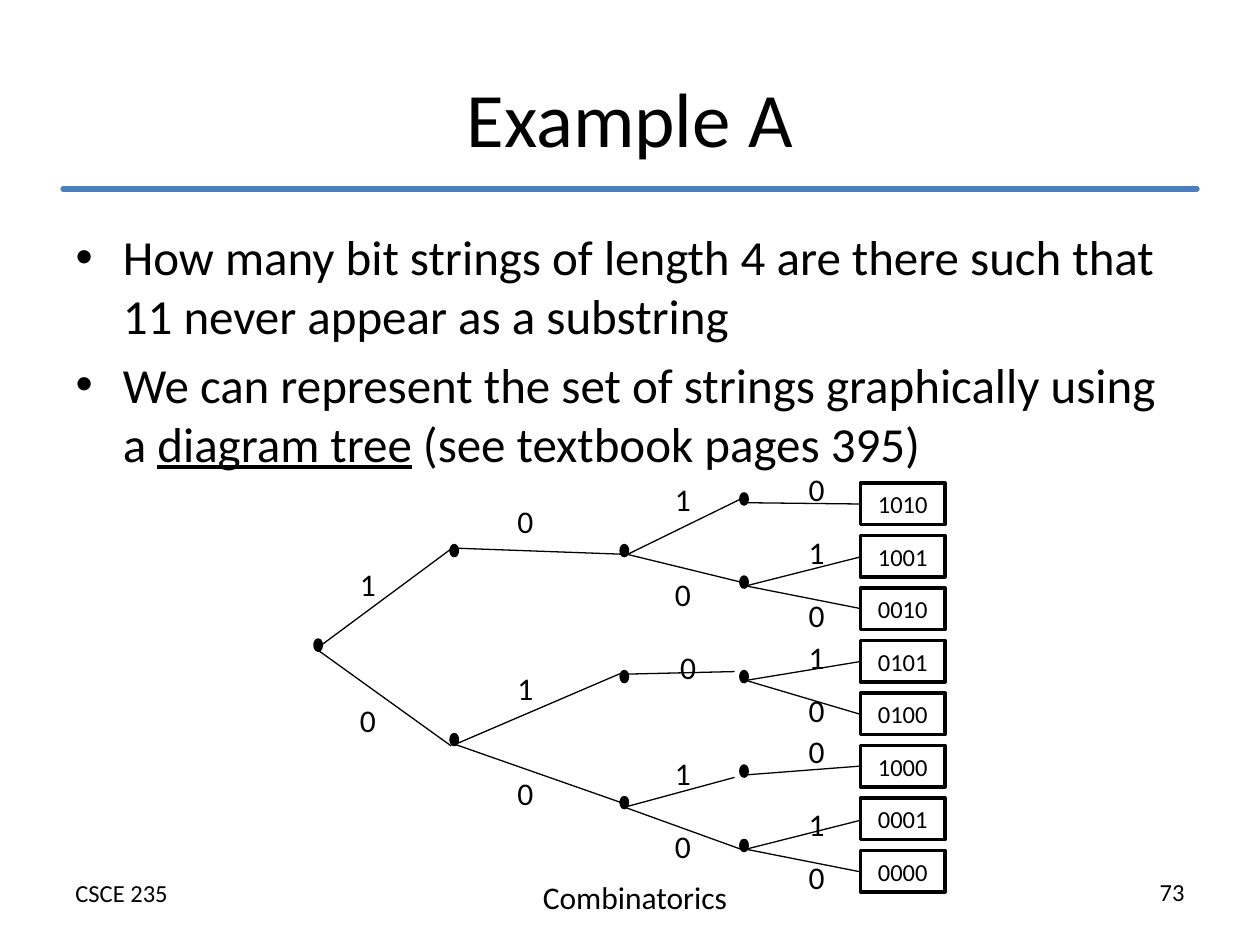
from typing import NamedTuple

from lxml.etree import SubElement
from pptx import Presentation
from pptx.dml.color import RGBColor
from pptx.enum.shapes import MSO_CONNECTOR, MSO_SHAPE
from pptx.enum.text import MSO_ANCHOR, MSO_AUTO_SIZE, PP_ALIGN
from pptx.oxml.ns import qn
from pptx.util import Inches, Pt

FONT = "Calibri"
BLACK = "000000"
BLUE = "4B7EBC"
BOX_LEFT, BOX_TOP, BOX_PITCH = 6.83, 46 / 12, 5 / 12
BOX_WIDTH, BOX_HEIGHT = 0.67, 0.33
NODE_WIDTH, NODE_HEIGHT = 0.05, 0.08
LABEL_SIZE = 0.42


class Edge(NamedTuple):
    start: tuple[float, float]
    end: tuple[float, float]
    bit: str
    label: tuple[float, float]


class Caption(NamedTuple):
    text: str
    left: float
    top: float
    height: float
    size: int
    alignment: PP_ALIGN


CAPTIONS = [
    Caption("CSCE 235", 0.5, 6.92, 0.34, 14, PP_ALIGN.LEFT),
    Caption("Combinatorics", 3.58, 6.92, 0.4, 18, PP_ALIGN.CENTER),
    Caption("73", 6.58, 6.91, 0.34, 14, PP_ALIGN.RIGHT),
]
BIT_STRINGS = ["1010", "1001", "0010", "0101", "0100", "1000", "0001", "0000"]
NODE_COLUMNS = {
    2.5: [5.08],
    3.58: [4.33, 5.83],
    4.93: [4.33, 5.33, 6.33],
    5.88: [3.92, 4.58, 5.33, 6.08, 6.67],
}
EDGES = [
    Edge((2.51, 5.15), (3.59, 4.35), "1", (2.71, 4.42)),
    Edge((2.51, 5.15), (3.58, 5.92), "0", (2.71, 5.5)),
    Edge((3.59, 4.35), (4.98, 4.4), "0", (3.96, 3.92)),
    Edge((3.63, 5.9), (4.96, 5.33), "1", (3.96, 5.25)),
    Edge((3.59, 5.9), (4.93, 6.37), "0", (3.96, 6.08)),
    Edge((4.98, 4.4), (5.88, 3.96), "1", (5.21, 3.75)),
    Edge((4.98, 4.4), (5.88, 4.62), "0", (5.21, 4.5)),
    Edge((4.98, 5.35), (5.83, 5.33), "0", (5.25, 5.08)),
    Edge((4.98, 6.4), (5.83, 6.17), "1", (5.21, 5.92)),
    Edge((4.94, 6.4), (5.88, 6.74), "0", (5.21, 6.5)),
    Edge((5.92, 3.99), (6.83, 4), "0", (6.27, 3.67)),
    Edge((5.92, 4.65), (6.83, 4.42), "1", (6.27, 4.17)),
    Edge((5.92, 4.65), (6.83, 4.83), "0", (6.27, 4.67)),
    Edge((5.92, 5.4), (6.83, 5.25), "1", (6.27, 5)),
    Edge((5.92, 5.4), (6.83, 5.67), "0", (6.27, 5.42)),
    Edge((5.92, 6.15), (6.83, 6.08), "0", (6.27, 5.75)),
    Edge((5.92, 6.74), (6.83, 6.51), "1", (6.27, 6.33)),
    Edge((5.92, 6.74), (6.83, 6.92), "0", (6.27, 6.75)),
]
BULLETS = [
    ["How many bit strings of length 4 are there such that 11 never appear as a substring"],
    ["We can represent the set of strings graphically using a ", "diagram tree", " (see textbook pages 395)"],
]


def color(hex_value: str) -> RGBColor:
    """Turn a hex string into a colour."""
    return RGBColor.from_string(hex_value)


def format_text(shape, size: int, alignment: PP_ALIGN) -> None:
    """Give all text of a shape one font, size, colour and alignment."""
    for paragraph in shape.text_frame.paragraphs:
        paragraph.alignment = alignment
        for run in paragraph.runs:
            run.font.name = FONT
            run.font.size = Pt(size)
            run.font.color.rgb = color(BLACK)


def place(shape, left: float, top: float, width: float, height: float) -> None:
    """Move and size a shape, in inches."""
    shape.left, shape.top = Inches(left), Inches(top)
    shape.width, shape.height = Inches(width), Inches(height)


def add_text(slide, text: str, left: float, top: float, width: float, height: float,
             size: int, alignment: PP_ALIGN, anchor: MSO_ANCHOR) -> None:
    """Add a wrapping text box."""
    box = slide.shapes.add_textbox(Inches(left), Inches(top), Inches(width), Inches(height))
    box.text_frame.word_wrap = True
    box.text_frame.vertical_anchor = anchor
    box.text_frame.text = text
    format_text(box, size, alignment)


def add_line(slide, start: tuple[float, float], end: tuple[float, float],
             line_color: str, width: float):
    """Add a straight line without a shadow."""
    points = [Inches(value) for value in (*start, *end)]
    line = slide.shapes.add_connector(MSO_CONNECTOR.STRAIGHT, *points)
    line.line.color.rgb = color(line_color)
    line.line.width = Pt(width)
    SubElement(line._element.spPr, qn("a:effectLst"))
    return line


def add_outlined(slide, preset: MSO_SHAPE, left: float, top: float, width: float, height: float):
    """Add an unfilled black-outlined shape."""
    shape = slide.shapes.add_shape(preset, Inches(left), Inches(top), Inches(width), Inches(height))
    shape.shadow.inherit = False
    shape.fill.background()
    shape.line.color.rgb = color(BLACK)
    shape.line.width = Pt(2)
    return shape


def add_node(slide, left: float, top: float) -> None:
    """Add a solid tree node."""
    node = add_outlined(slide, MSO_SHAPE.OVAL, left, top, NODE_WIDTH, NODE_HEIGHT)
    node.fill.solid()
    node.fill.fore_color.rgb = color(BLACK)


def add_leaf(slide, text: str, top: float) -> None:
    """Add a boxed bit string."""
    leaf = add_outlined(slide, MSO_SHAPE.RECTANGLE, BOX_LEFT, top, BOX_WIDTH, BOX_HEIGHT)
    leaf.text_frame.text = text
    leaf.text_frame.vertical_anchor = MSO_ANCHOR.MIDDLE
    format_text(leaf, 14, PP_ALIGN.CENTER)


def fill_placeholders(slide) -> None:
    """Write the title and the bulleted list."""
    title, body = slide.shapes.title, slide.placeholders[1]
    place(title, 0.5, 0.3, 9, 1.25)
    title.text_frame.text = "Example A"
    title.text_frame.vertical_anchor = MSO_ANCHOR.MIDDLE
    format_text(title, 44, PP_ALIGN.CENTER)
    place(body, 0.5, 1.75, 9, 4.95)
    frame = body.text_frame
    frame.auto_size = MSO_AUTO_SIZE.NONE
    for index, parts in enumerate(BULLETS):
        paragraph = frame.add_paragraph() if index else frame.paragraphs[0]
        for part in parts:
            paragraph.add_run().text = part
    format_text(body, 28, PP_ALIGN.LEFT)
    frame.paragraphs[1].runs[1].font.underline = True


def main() -> None:
    """Build and save the slide."""
    presentation = Presentation()
    presentation.slide_width, presentation.slide_height = Inches(10), Inches(7.5)
    slide = presentation.slides.add_slide(presentation.slide_layouts[1])
    fill_placeholders(slide)
    rule = add_line(slide, (0.5, 1.5), (9.5, 1.5), BLUE, 3)
    rule.line._get_or_add_ln().set("cap", "rnd")
    for caption in CAPTIONS:
        add_text(slide, caption.text, caption.left, caption.top, 2.92, caption.height,
                 caption.size, caption.alignment, MSO_ANCHOR.TOP)
    for index, bits in enumerate(BIT_STRINGS):
        add_leaf(slide, bits, BOX_TOP + index * BOX_PITCH)
    for left, tops in NODE_COLUMNS.items():
        for top in tops:
            add_node(slide, left, top)
    for edge in EDGES:
        add_line(slide, edge.start, edge.end, BLACK, 0.75)
        add_text(slide, edge.bit, *edge.label, LABEL_SIZE, LABEL_SIZE,
                 18, PP_ALIGN.CENTER, MSO_ANCHOR.MIDDLE)
    presentation.save("out.pptx")


if __name__ == "__main__":
    main()
